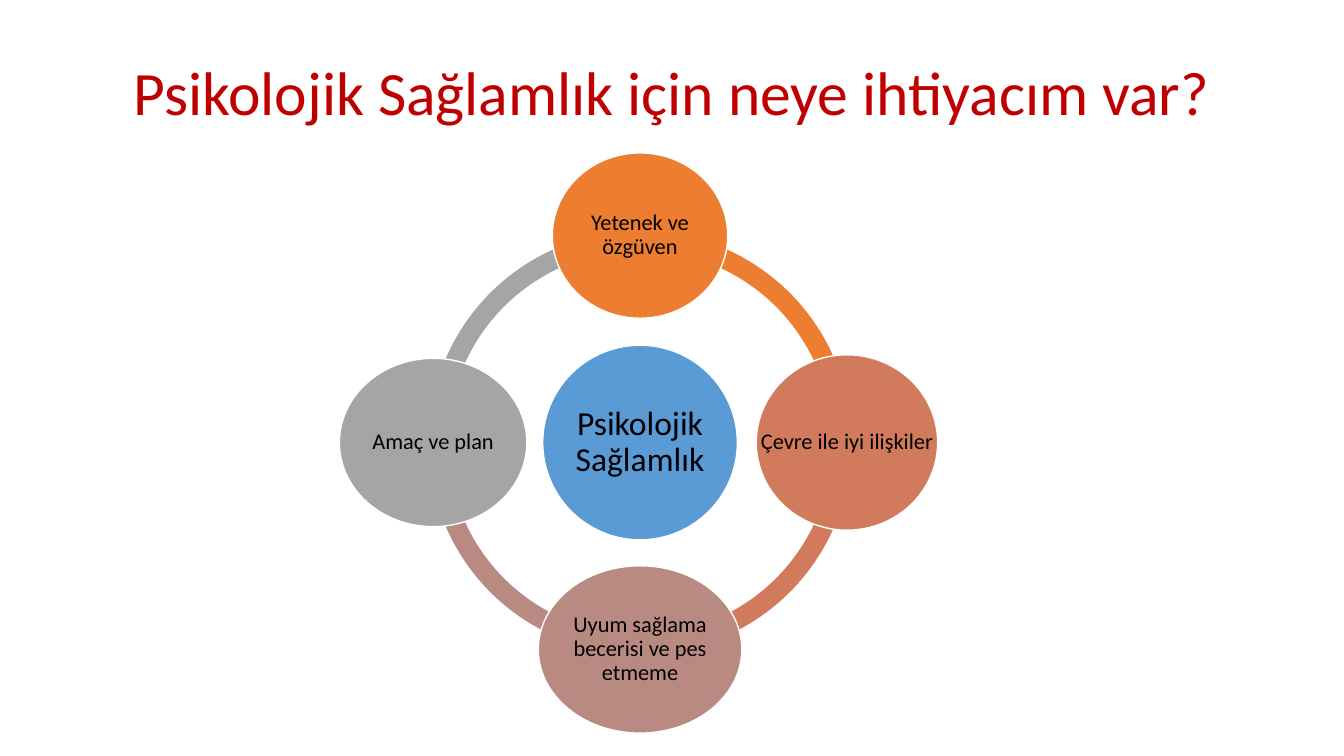
"""Build the slide on what psychological resilience needs: a hub inside a ring of four circles."""
from math import cos, radians, sin

from pptx import Presentation
from pptx import util as u
from pptx.dml.color import RGBColor
from pptx.enum import shapes, text

RED = RGBColor(0xC0, 0x00, 0x00)
BLACK = RGBColor(0x00, 0x00, 0x00)
WHITE = RGBColor(0xFF, 0xFF, 0xFF)
BLUE = RGBColor(0x5B, 0x9B, 0xD5)
ORANGE = RGBColor(0xED, 0x7D, 0x31)
CORAL = RGBColor(0xD1, 0x7B, 0x5C)
ROSE = RGBColor(0xB9, 0x8A, 0x82)
GREY = RGBColor(0xA5, 0xA5, 0xA5)

TITLE = "Psikolojik Sağlamlık için neye ihtiyacım var?"
HUB = ("Psikolojik Sağlamlık", BLUE, 139, 139)
NEEDS = [
    ("Yetenek ve özgüven", ORANGE, 125.3, 118.1),
    ("Çevre ile iyi ilişkiler", CORAL, 129.6, 125.3),
    ("Uyum sağlama becerisi ve pes etmeme", ROSE, 145.4, 119.5),
    ("Amaç ve plan", GREY, 133.9, 120.2),
]

CENTRE_X, CENTRE_Y = 457.2, 316.1
RING_SIZE, RING_THICKNESS = 302.4, 0.046
ORBIT = 147.8
STEP = 360 / len(NEEDS)
ARC_UNITS_PER_DEGREE = 0.6


def centred_box(x, y, width, height):
    """Return left, top, width and height around a centre."""
    return [u.Pt(value) for value in (x - width / 2, y - height / 2, width, height)]


def add_shape(parent, kind, box, colour):
    """Add a flat filled shape without an outline."""
    shape = parent.add_shape(kind, *box)
    shape.shadow.inherit = False
    shape.fill.solid()
    shape.fill.fore_color.rgb = colour
    shape.line.fill.background()
    return shape


def add_text(parent, box, wording, size, colour, inset=None):
    """Add centred wrapping text."""
    frame = parent.add_textbox(*box).text_frame
    frame_format = {"word_wrap": True, "vertical_anchor": text.MSO_ANCHOR.MIDDLE}
    if inset is not None:
        for side in ("left", "top", "right", "bottom"):
            frame_format["margin_" + side] = u.Pt(inset)
    for name, value in frame_format.items():
        setattr(frame, name, value)
    paragraph = frame.paragraphs[0]
    paragraph.alignment = text.PP_ALIGN.CENTER
    paragraph.line_spacing = 0.9
    run = paragraph.add_run()
    run.text = wording
    for name, value in {"name": "Calibri", "size": u.Pt(size)}.items():
        setattr(run.font, name, value)
    run.font.color.rgb = colour


def add_circle(parent, x, y, circle, size, inset):
    """Add an outlined ellipse with its label."""
    wording, colour, width, height = circle
    box = centred_box(x, y, width, height)
    shape = add_shape(parent, shapes.MSO_SHAPE.OVAL, box, colour)
    shape.line.color.rgb = WHITE
    shape.line.width = u.Pt(1)
    add_text(parent, box, wording, size, BLACK, inset)


def main():
    """Assemble and save the presentation."""
    presentation = Presentation()
    presentation.slide_width, presentation.slide_height = u.Pt(960), u.Pt(540)
    slide = presentation.slides.add_slide(presentation.slide_layouts[6])
    add_text(slide.shapes, centred_box(480, 68, 828, 104.4), TITLE, 44, RED)

    diagram = slide.shapes.add_group_shape().shapes
    angles = [(270 + STEP * index) % 360 for index in range(len(NEEDS))]
    ring_box = centred_box(CENTRE_X, CENTRE_Y, RING_SIZE, RING_SIZE)
    for angle, (_, colour, _, _) in reversed(list(zip(angles, NEEDS))):
        arc = add_shape(diagram, shapes.MSO_SHAPE.BLOCK_ARC, ring_box, colour)
        arc.adjustments[0] = angle * ARC_UNITS_PER_DEGREE
        arc.adjustments[1] = (angle + STEP) % 360 * ARC_UNITS_PER_DEGREE
        arc.adjustments[2] = RING_THICKNESS

    add_circle(diagram, CENTRE_X, CENTRE_Y, HUB, 24, 2.2)
    for angle, need in zip(angles, NEEDS):
        x = CENTRE_X + ORBIT * cos(radians(angle))
        y = CENTRE_Y + ORBIT * sin(radians(angle))
        add_circle(diagram, x, y, need, 16, 1.4)

    presentation.save("out.pptx")


if __name__ == "__main__":
    main()
